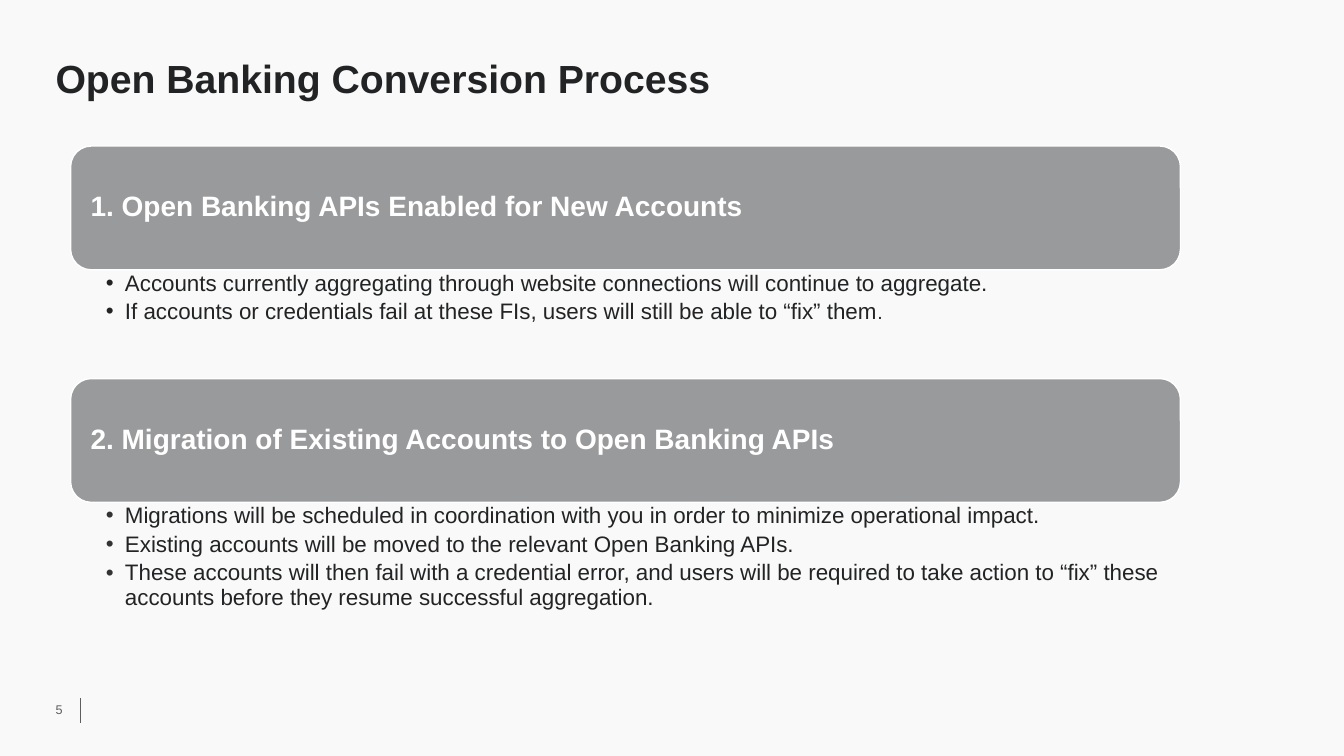
from lxml import etree
from pptx import Presentation
from pptx.dml.color import RGBColor
from pptx.enum.shapes import MSO_CONNECTOR, MSO_SHAPE
from pptx.enum.text import MSO_ANCHOR, MSO_AUTO_SIZE, PP_ALIGN
from pptx.oxml.ns import qn
from pptx.util import Cm, Pt

ROUNDED, STRAIGHT = MSO_SHAPE.ROUNDED_RECTANGLE, MSO_CONNECTOR.STRAIGHT
TOP, MIDDLE, LEFT = MSO_ANCHOR.TOP, MSO_ANCHOR.MIDDLE, PP_ALIGN.LEFT
NO_AUTOFIT = MSO_AUTO_SIZE.NONE

PAPER = RGBColor(0xF9, 0xF9, 0xF9)
INK = RGBColor(0x22, 0x23, 0x24)
BULLET_GREY = RGBColor(0x33, 0x33, 0x33)
BANNER_GREY = RGBColor(0x99, 0x9A, 0x9B)
FOOTER_GREY = RGBColor(0x5E, 0x5E, 0x5E)
WHITE = RGBColor(0xFF, 0xFF, 0xFF)
FONT = "Arial"

BANNER_HEIGHT = Cm(3.12)
BULLETS_HEIGHT = Cm(2.74)
STEP_HEIGHT = BANNER_HEIGHT + BULLETS_HEIGHT

# Heading, bullet colour, bullets (each a list of text and size pairs)
STEPS = [
    ("1. Open Banking APIs Enabled for New Accounts", INK, [
        [("Accounts currently aggregating through website connections "
          "will continue to aggregate.", 16)],
        [("If accounts or credentials fail at these FIs, users will still "
          "be able to “fix” them", 16), (".", 14)],
    ]),
    ("2. Migration of Existing Accounts to Open Banking APIs", BULLET_GREY, [
        [("Migrations will be scheduled in coordination with you in order "
          "to minimize operational impact.", 16)],
        [("Existing accounts will be moved to the relevant Open Banking "
          "APIs.", 16)],
        [("These accounts will then fail with a credential error, and users "
          "will be required to take action to “fix” these accounts before "
          "they resume successful aggregation.", 16)],
    ]),
]


def set_frame(frame, anchor, left, top, right, bottom):
    frame.word_wrap = True
    frame.auto_size = NO_AUTOFIT
    frame.vertical_anchor = anchor
    frame.margin_left, frame.margin_top = left, top
    frame.margin_right, frame.margin_bottom = right, bottom


def style_run(run, size, color, bold=False):
    run.font.name, run.font.size = FONT, Pt(size)
    run.font.color.rgb, run.font.bold = color, bold


def write_line(frame, text, size, color, bold=False):
    frame.text = text
    line = frame.paragraphs[0]
    line.alignment, line.line_spacing = LEFT, 0.9
    style_run(line.runs[0], size, color, bold)


def add_bullet_mark(paragraph, color):
    properties = paragraph._p.get_or_add_pPr()
    properties.set("marL", str(Cm(0.48)))
    properties.set("indent", str(-Cm(0.48)))
    mark_color = etree.SubElement(properties, qn("a:buClr"))
    etree.SubElement(mark_color, qn("a:srgbClr"), val=str(color))
    etree.SubElement(properties, qn("a:buFont"), typeface=FONT)
    etree.SubElement(properties, qn("a:buChar"), char="•")


def place_title(slide, left, top, width, height):
    title = slide.shapes.title
    title.left, title.top, title.width, title.height = left, top, width, height
    set_frame(title.text_frame, TOP, 0, Cm(0.13), 0, Cm(0.13))
    write_line(title.text_frame, "Open Banking Conversion Process", 28, INK, True)
    title.text_frame.paragraphs[0].space_before = Pt(0)


def add_step(slide, left, top, width, heading, mark_color, bullets):
    # Banner with the heading
    banner = slide.shapes.add_shape(ROUNDED, left, top, width, BANNER_HEIGHT)
    banner.shadow.inherit = False
    banner.fill.solid()
    banner.fill.fore_color.rgb = BANNER_GREY
    banner.line.color.rgb, banner.line.width = WHITE, Pt(1)
    set_frame(banner.text_frame, MIDDLE, *[Cm(0.35)] * 4)
    write_line(banner.text_frame, heading, 20, WHITE, True)

    # Bullets below the banner
    details = slide.shapes.add_textbox(left, top + BANNER_HEIGHT, width, BULLETS_HEIGHT)
    frame = details.text_frame
    set_frame(frame, TOP, Cm(0.89), Cm(0.05), Cm(0.3), Cm(0.05))
    for index, pieces in enumerate(bullets):
        bullet = frame.add_paragraph() if index else frame.paragraphs[0]
        bullet.line_spacing, bullet.space_after = 0.9, Pt(3.2)
        add_bullet_mark(bullet, mark_color)
        for text, size in pieces:
            run = bullet.add_run()
            run.text = text
            style_run(run, size, INK)


def add_footer(slide, left, top, width, height):
    # Page number
    page = slide.shapes.add_textbox(left, top, width, height)
    set_frame(page.text_frame, MIDDLE, 0, Cm(0.13), 0, Cm(0.13))
    write_line(page.text_frame, "5", 9, FOOTER_GREY)

    # Rule to its right
    right, inset = left + width, Cm(0.2)
    rule = slide.shapes.add_connector(
        STRAIGHT, right, top + inset, right, top + height - inset)
    rule.line.color.rgb, rule.line.width = FOOTER_GREY, Pt(0.5)
    etree.SubElement(rule._element.spPr, qn("a:effectLst"))


def main():
    deck = Presentation()
    deck.slide_width, deck.slide_height = Cm(33.87), Cm(19.05)
    slide = deck.slides.add_slide(deck.slide_layouts[5])
    slide.background.fill.solid()
    slide.background.fill.fore_color.rgb = PAPER

    place_title(slide, Cm(1.4), Cm(1.37), Cm(28.7), Cm(1))
    for index, step in enumerate(STEPS):
        add_step(slide, Cm(1.78), Cm(3.68) + index * STEP_HEIGHT, Cm(27.97), *step)
    add_footer(slide, Cm(1.4), Cm(17.4), Cm(0.63), Cm(1.02))
    deck.save("out.pptx")


if __name__ == "__main__":
    main()
